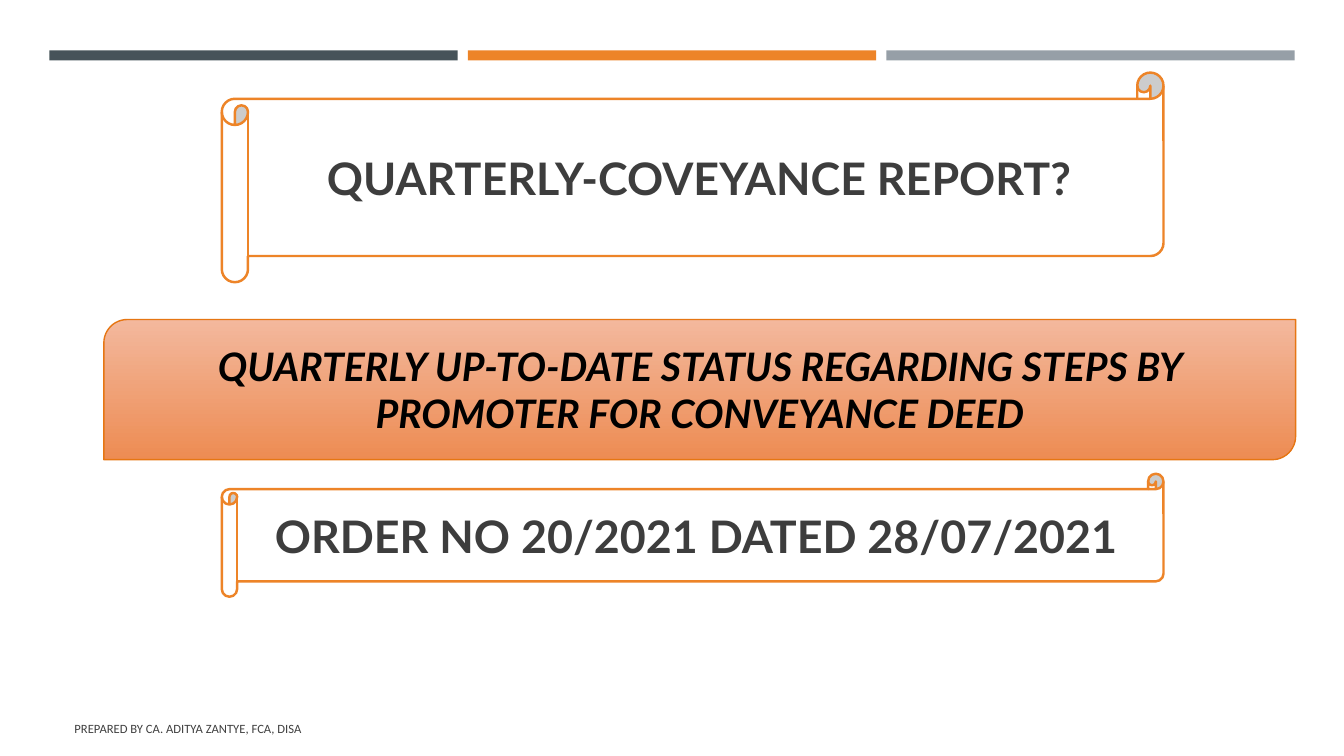
from pptx import Presentation
from pptx.dml.color import RGBColor
from pptx.enum.shapes import MSO_SHAPE as Shape
from pptx.enum.text import MSO_ANCHOR as Anchor, MSO_AUTO_SIZE as AutoSize, PP_ALIGN as Align
from pptx.util import Inches, Pt

# Content
HEADING = "QUARTERLY-COVEYANCE REPORT?"
STATUS = "QUARTERLY UP-TO-DATE STATUS REGARDING STEPS BY PROMOTER FOR CONVEYANCE DEED"
ORDER = "ORDER NO 20/2021 DATED 28/07/2021"
PREPARED_BY = "PREPARED BY CA. ADITYA ZANTYE, FCA, DISA"

# Look and layout, lengths in inches
BAR_COLORS = ["465359", "ED8428", "969FA7"]
BAR_LEFT, BAR_TOP, BAR_WIDTH, BAR_HEIGHT, BAR_GAP = 0.49, 0.5, 4.05, 0.1, 0.1
SCROLL_LEFT, SCROLL_WIDTH = 2.2, 9.34
HEADING_TOP, HEADING_HEIGHT = 0.72, 2.08
ORDER_TOP, ORDER_HEIGHT = 4.7, 1.22
STATUS_BOX = (1.03, 3.17, 11.82, 1.39)
FOOTER_BOX = (0.64, 7.03, 7.56, 0.4)
ROLL = 0.125  # roll thickness as a share of scroll height

SCROLL_FONT = {"name": "Lato", "size": Pt(32), "bold": True}
STATUS_FONT = {"name": "Lato", "size": Pt(28), "bold": True, "italic": True}
FOOTER_FONT = {"name": "Calibri", "size": Pt(9)}


def rgb(value):
    return RGBColor.from_string(value)


def inches(box):
    return [Inches(length) for length in box]


def write(part, text, font, color, align=Align.CENTER):
    frame = part.text_frame
    frame.word_wrap = True
    frame.auto_size = AutoSize.NONE
    frame.vertical_anchor = Anchor.MIDDLE
    line = frame.paragraphs[0]
    line.alignment = align
    run = line.add_run()
    run.text = text
    for key, value in font.items():
        setattr(run.font, key, value)
    run.font.color.rgb = rgb(color)


def add_panel(slide, kind, box, fill, outline=None, weight=0):
    panel = slide.shapes.add_shape(kind, *inches(box))
    panel.shadow.inherit = False
    if isinstance(fill, str):
        panel.fill.solid()
        panel.fill.fore_color.rgb = rgb(fill)
    else:
        panel.fill.gradient()
        panel.fill.gradient_angle = 270
        for stop, color in zip(panel.fill.gradient_stops, fill):
            stop.color.rgb = rgb(color)
    if outline:
        panel.line.color.rgb = rgb(outline)
        panel.line.width = Pt(weight)
    else:
        panel.line.fill.background()
    return panel


def add_scroll(slide, top, height):
    box = (SCROLL_LEFT, top, SCROLL_WIDTH, height)
    return add_panel(slide, Shape.HORIZONTAL_SCROLL, box, "FFFFFF", "ED8428", 1.75)


def main():
    deck = Presentation()
    deck.slide_width, deck.slide_height = Inches(13.33), Inches(7.5)
    slide = deck.slides.add_slide(deck.slide_layouts[5])

    # Top bars
    for column, color in enumerate(BAR_COLORS):
        left = BAR_LEFT + column * (BAR_WIDTH + BAR_GAP)
        add_panel(slide, Shape.RECTANGLE, (left, BAR_TOP, BAR_WIDTH, BAR_HEIGHT), color)

    # Heading, set on the sheet of its scroll
    heading_scroll = add_scroll(slide, HEADING_TOP, HEADING_HEIGHT)
    roll = HEADING_HEIGHT * ROLL
    heading = slide.shapes.title
    heading.left, heading.top, heading.width, heading.height = inches(
        (SCROLL_LEFT + roll, HEADING_TOP + roll,
         SCROLL_WIDTH - 1.5 * roll, HEADING_HEIGHT - 2 * roll))
    write(heading, HEADING, SCROLL_FONT, "3D3D3D")
    heading_scroll._element.addnext(heading._element)

    # Status banner
    status = add_panel(slide, Shape.ROUND_2_DIAG_RECTANGLE, STATUS_BOX,
                       ("F3B89D", "ED8C53"), "E67613", 1)
    write(status, STATUS, STATUS_FONT, "000000")

    # Order scroll
    order = add_scroll(slide, ORDER_TOP, ORDER_HEIGHT)
    write(order, ORDER, SCROLL_FONT, "3D3D3D")

    # Footer
    footer = slide.shapes.add_textbox(*inches(FOOTER_BOX))
    write(footer, PREPARED_BY, FOOTER_FONT, "404040", Align.LEFT)

    deck.save("out.pptx")


if __name__ == "__main__":
    main()
